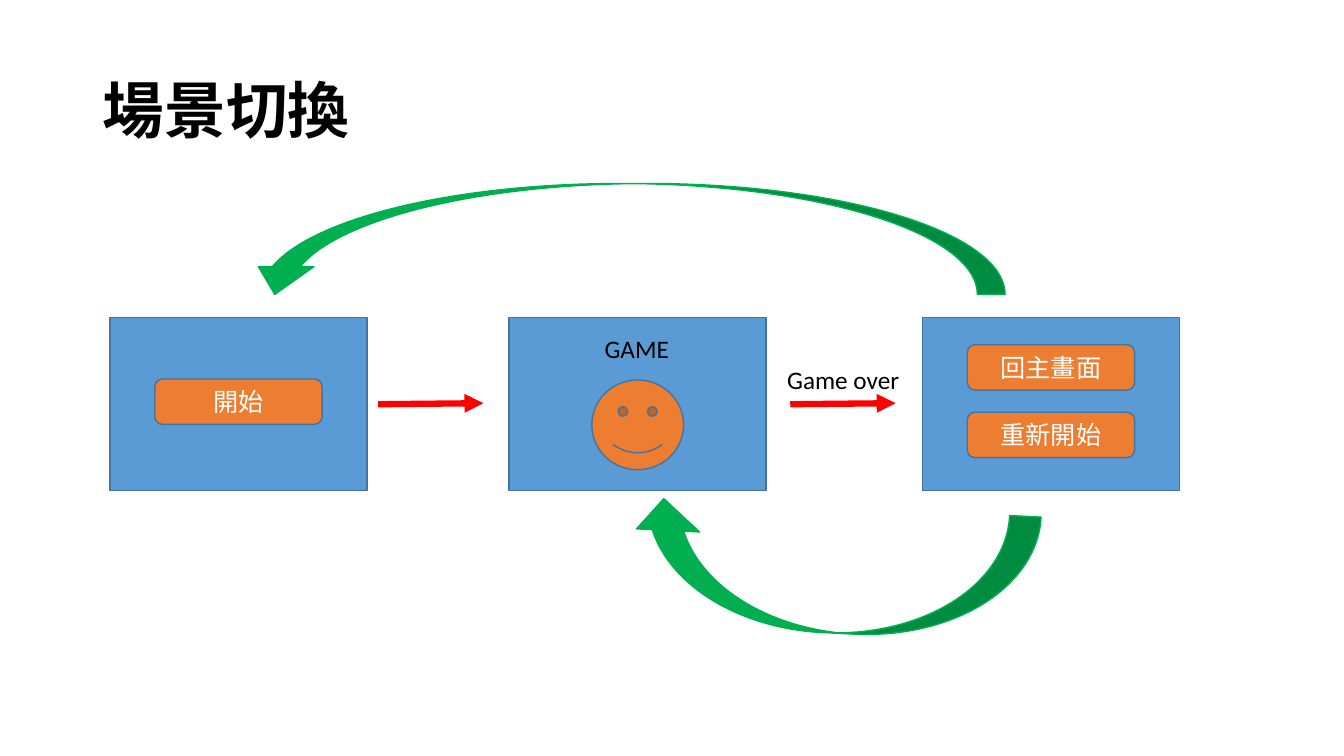
from lxml.etree import SubElement
from pptx import Presentation
from pptx.dml.color import RGBColor
from pptx.enum.shapes import MSO_CONNECTOR, MSO_SHAPE
from pptx.enum.text import MSO_ANCHOR, MSO_AUTO_SIZE, PP_ALIGN
from pptx.oxml.ns import qn
from pptx.util import Inches, Pt

# Grid: 100 columns by 100 rows over the slide
SLIDE_W, SLIDE_H = Inches(13.33), Inches(7.5)
COLUMN, ROW = SLIDE_W / 100, SLIDE_H / 100

BLUE, ORANGE, OUTLINE = "5B9BD5", "ED7D31", "43739E"
GREEN, RED, BLACK, WHITE = "00B050", "FF0000", "000000", "FFFFFF"

# Scenes, in columns and rows
START_X, GAME_X, OVER_X = 8.18, 37.88, 68.63
SCENE_Y, SCENE_W, SCENE_H = 42, 19.13, 22.93
BUTTON_W, BUTTON_H = 12.45, 6

FRAME = {"margin_left": Inches(0.1), "margin_right": Inches(0.1),
         "margin_top": Inches(0.05), "margin_bottom": Inches(0.05)}
LABEL_FRAME = {**FRAME, "word_wrap": False,
               "auto_size": MSO_AUTO_SIZE.SHAPE_TO_FIT_TEXT}
BUTTON_FRAME = {**FRAME, "word_wrap": True,
                "vertical_anchor": MSO_ANCHOR.MIDDLE}
TITLE_FRAME = {**BUTTON_FRAME, "auto_size": MSO_AUTO_SIZE.NONE}
BODY_FONT = {"name": "Calibri", "size": Pt(18), "bold": False}
TITLE_FONT = {"name": "Calibri", "size": Pt(44), "bold": True}


def rgb(code):
    return RGBColor.from_string(code)


def cell(x, y, w, h):
    """Turn grid columns and rows into slide lengths."""
    return [round(n * unit) for n, unit in
            zip((x, y, w, h), (COLUMN, ROW, COLUMN, ROW))]


def apply(target, values):
    for key, value in values.items():
        setattr(target, key, value)


def write(holder, words, frame, font, color, align=PP_ALIGN.LEFT):
    text = holder.text_frame
    text.text = words
    apply(text, frame)
    paragraph = text.paragraphs[0]
    paragraph.alignment = align
    run = paragraph.runs[0]
    apply(run.font, font)
    run.font.color.rgb = rgb(color)
    return paragraph


def add_figure(slide, kind, place, fill, outline=OUTLINE, rotation=0):
    figure = slide.shapes.add_shape(kind, *cell(*place))
    figure.shadow.inherit = False
    figure.fill.solid()
    figure.fill.fore_color.rgb = rgb(fill)
    figure.line.color.rgb = rgb(outline)
    figure.line.width = Pt(1)
    figure.rotation = rotation
    return figure


def add_scene(slide, x):
    add_figure(slide, MSO_SHAPE.RECTANGLE, (x, SCENE_Y, SCENE_W, SCENE_H), BLUE)


def add_button(slide, scene_x, y, words):
    x = scene_x + (SCENE_W - BUTTON_W) / 2
    button = add_figure(slide, MSO_SHAPE.ROUNDED_RECTANGLE,
                        (x, y, BUTTON_W, BUTTON_H), ORANGE)
    write(button, words, BUTTON_FRAME, BODY_FONT, WHITE, PP_ALIGN.CENTER)


def add_label(slide, x, y, w, words):
    label = slide.shapes.add_textbox(*cell(x, y, w, 5.33))
    write(label, words, LABEL_FRAME, BODY_FONT, BLACK)


def add_step(slide, x):
    """Red arrow from one scene to the next."""
    left, top, width, rise = cell(x, 53.47, 7.84, 0.14)
    step = slide.shapes.add_connector(MSO_CONNECTOR.STRAIGHT, left, top,
                                      left + width, top - rise)
    step.line.color.rgb = rgb(RED)
    step.line.width = Pt(4.5)
    SubElement(step.line._get_or_add_ln(), qn("a:tailEnd"), type="triangle")
    SubElement(step._element.spPr, qn("a:effectLst"))


def main():
    deck = Presentation()
    deck.slide_width, deck.slide_height = SLIDE_W, SLIDE_H
    slide = deck.slides.add_slide(deck.slide_layouts[5])

    # Title
    title = slide.shapes.title
    apply(title, dict(zip(("left", "top", "width", "height"),
                          cell(6.9, 5.33, 86.25, 19.33))))
    heading = write(title, "場景切換", TITLE_FRAME, TITLE_FONT, BLACK)
    heading.line_spacing = 0.9

    # Scenes and the steps between them
    for scene_x in (START_X, GAME_X, OVER_X):
        add_scene(slide, scene_x)
    for step_x in (28.13, 58.8):
        add_step(slide, step_x)

    # Scene contents
    for scene_x, y, words in ((START_X, 50.13, "開始"),
                              (OVER_X, 45.6, "回主畫面"),
                              (OVER_X, 54.53, "重新開始")):
        add_button(slide, scene_x, y, words)
    add_figure(slide, MSO_SHAPE.SMILEY_FACE, (44.03, 50.27, 6.83, 11.87), ORANGE)
    add_label(slide, 44.25, 43.47, 6.38, "GAME")

    # Ways back: to the game, and to the start
    add_figure(slide, MSO_SHAPE.CURVED_DOWN_ARROW,
               (46.8, 67.07, 30.45, 16.67), GREEN, GREEN, 182.8)
    add_figure(slide, MSO_SHAPE.CURVED_UP_ARROW,
               (18.38, 24.27, 56.4, 14.67), GREEN, GREEN, 180)
    add_label(slide, 57.83, 47.47, 9.98, "Game over")

    deck.save("out.pptx")


if __name__ == "__main__":
    main()
